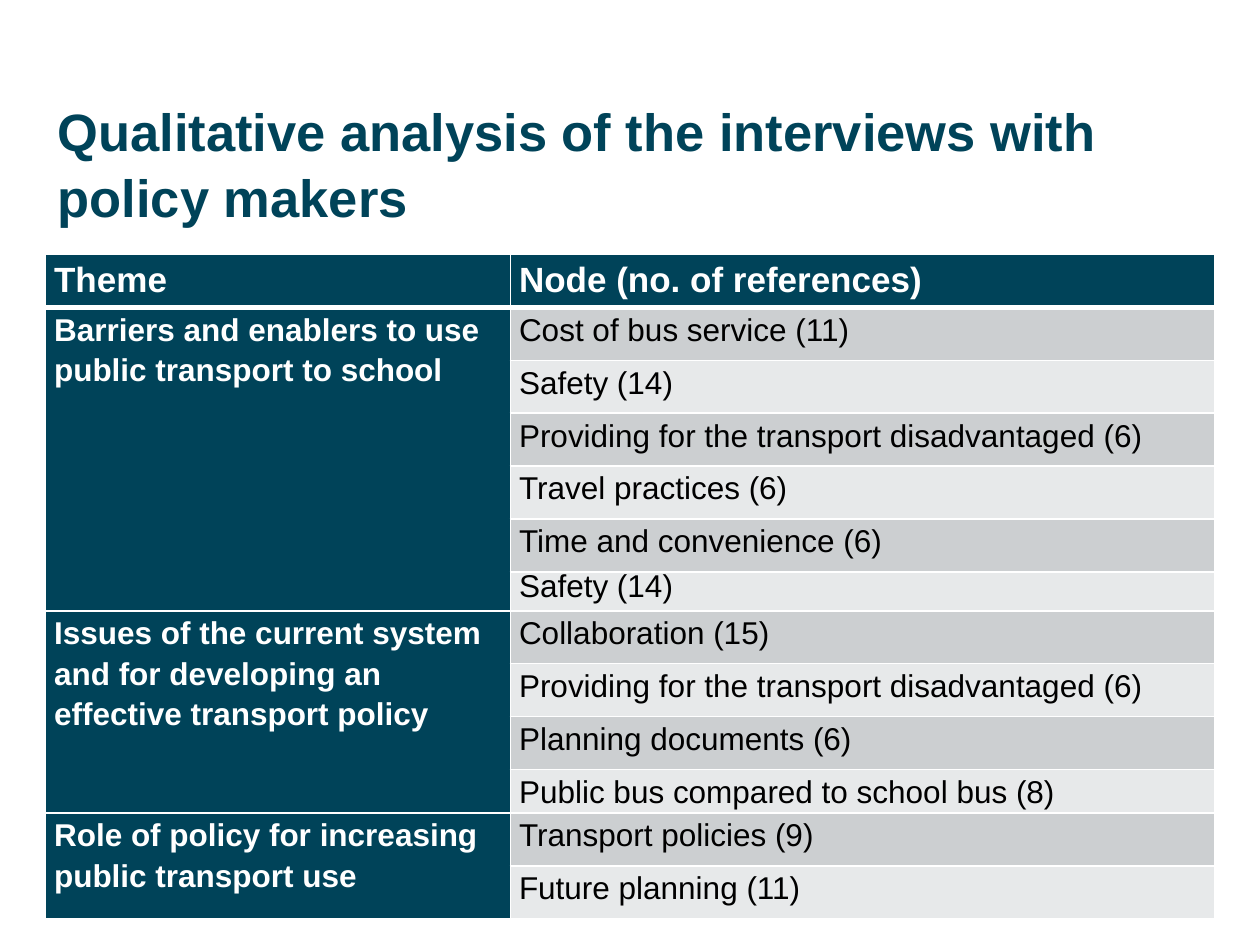
from lxml import etree
from pptx import Presentation
from pptx.dml.color import RGBColor
from pptx.enum.text import MSO_ANCHOR
from pptx.oxml.ns import qn
from pptx.util import Inches, Pt

BOTTOM = MSO_ANCHOR.BOTTOM
MIDDLE = MSO_ANCHOR.MIDDLE
TOP = MSO_ANCHOR.TOP
COLORS = {"teal": "004359", "white": "FFFFFF", "black": "000000",
          "dark_band": "CCCFD1", "light_band": "E7E9EA"}
THEMES = [
    ("Barriers and enablers to use public transport to school",
     ["Cost of bus service (11)", "Safety (14)",
      "Providing for the transport disadvantaged (6)", "Travel practices (6)",
      "Time and convenience (6)", "Safety (14)"]),
    ("Issues of the current system and for developing an effective transport policy",
     ["Collaboration (15)", "Providing for the transport disadvantaged (6)",
      "Planning documents (6)", "Public bus compared to school bus (8)"]),
    ("Role of policy for increasing public transport use",
     ["Transport policies (9)", "Future planning (11)"]),
]
SHORT_ROWS = {6: 0.31, 10: 0.34}


def style_text(p, size, color, bold, spacing):
    p.font.name = "Arial"
    p.font.size = Pt(size)
    p.font.bold = bold
    p.font.color.rgb = RGBColor.from_string(COLORS[color])
    p.line_spacing = spacing


def fill_cell(cell, text, fill, size=18, color="white", bold=True, bottom=1):
    cell.margin_left = cell.margin_right = Inches(0.07)
    cell.margin_top = cell.margin_bottom = 0
    cell.vertical_anchor = TOP
    tcPr = cell._tc.get_or_add_tcPr()
    for tag, width in (("a:lnL", 1), ("a:lnR", 1), ("a:lnT", 1), ("a:lnB", bottom)):
        ln = etree.SubElement(tcPr, qn(tag), w=str(Pt(width)))
        solid = etree.SubElement(ln, qn("a:solidFill"))
        etree.SubElement(solid, qn("a:srgbClr"), val=COLORS["white"])
    cell.fill.solid()
    cell.fill.fore_color.rgb = RGBColor.from_string(COLORS[fill])
    p = cell.text_frame.paragraphs[0]
    p.text = text
    style_text(p, size, color, bold, 1.15)


prs = Presentation()
prs.slide_width = Inches(10)
prs.slide_height = Inches(7.5)
s = prs.slides.add_slide(prs.slide_layouts[6])

title = s.shapes.add_textbox(Inches(0.36), Inches(0.76), Inches(9.28), Inches(1.1))
tf = title.text_frame
tf.word_wrap = True
tf.vertical_anchor = BOTTOM
p = tf.paragraphs[0]
p.text = "Qualitative analysis of the interviews with policy makers"
style_text(p, 30, "teal", True, 1.05)

row_count = 1 + sum(len(nodes) for theme, nodes in THEMES)
table = s.shapes.add_table(row_count, 2, Inches(0.36), Inches(2.02),
                           Inches(9.28), Inches(5.27)).table
table.columns[0].width = Inches(3.69)
table.columns[1].width = Inches(5.59)
for i, row in enumerate(table.rows):
    row.height = Inches(SHORT_ROWS.get(i, 0.42))

for col, heading in enumerate(["Theme", "Node (no. of references)"]):
    fill_cell(table.cell(0, col), heading, "teal", size=20, bottom=3)

first = 1
for theme, nodes in THEMES:
    last = first + len(nodes) - 1
    for i, node in enumerate(nodes, first):
        fill_cell(table.cell(i, 0), theme if i == first else "", "teal")
        band = "dark_band" if i % 2 else "light_band"
        fill_cell(table.cell(i, 1), node, band, color="black", bold=False)
    table.cell(first, 0).merge(table.cell(last, 0))
    first = last + 1

tight = table.cell(6, 1)
tight.vertical_anchor = MIDDLE
tight.text_frame.paragraphs[0].line_spacing = Pt(15)

prs.save("out.pptx")
